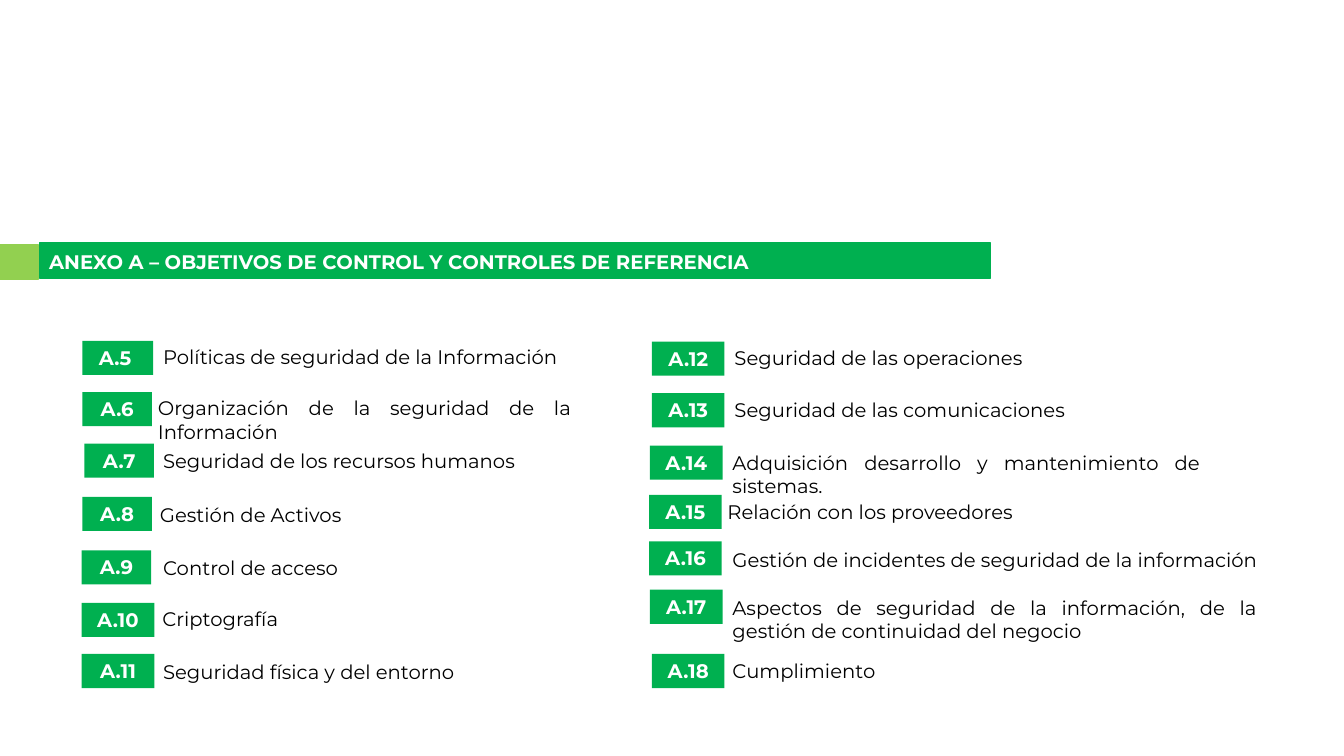
from pptx import Presentation
from pptx.dml.color import RGBColor
from pptx.enum.shapes import MSO_SHAPE
from pptx.enum.text import MSO_ANCHOR, MSO_AUTO_SIZE, PP_ALIGN
from pptx.util import Cm, Pt

COLORS = {"green": "00B050", "lime": "92D050", "white": "FFFFFF", "black": "000000"}
ROW_H = 0.86

# badge, (left, top, width), description, (left, top, width), in cm
CONTROLS = [
    ("A.5 ", (2.08, 8.59, 1.78), "Políticas de seguridad de la Información", (3.86, 8.56, 10.82)),
    ("A.6", (2.08, 9.88, 1.75), "Organización de la seguridad de la Información", (3.73, 9.86, 10.92)),
    ("A.7", (2.13, 11.18, 1.75), "Seguridad de los recursos humanos", (3.86, 11.18, 10.82)),
    ("A.8", (2.08, 12.52, 1.75), "Gestión de Activos", (3.78, 12.55, 10.92)),
    ("A.9", (2.06, 13.87, 1.75), "Control de acceso", (3.86, 13.89, 11.81)),
    ("A.10", (2.06, 15.19, 1.83), "Criptografía", (3.84, 15.16, 10.82)),
    ("A.11", (2.06, 16.48, 1.83), "Seguridad física y del entorno", (3.86, 16.51, 13.39)),
    ("A.12", (16.43, 8.61, 1.83), "Seguridad de las operaciones", (18.26, 8.59, 13.39)),
    ("A.13", (16.43, 9.91, 1.83), "Seguridad de las comunicaciones", (18.26, 9.91, 12.29)),
    ("A.14", (16.38, 11.23, 1.83), "Adquisición desarrollo y mantenimiento de sistemas.", (18.21, 11.23, 12.29)),
    ("A.15", (16.36, 12.47, 1.83), "Relación con los proveedores", (18.08, 12.47, 12.29)),
    ("A.16", (16.36, 13.64, 1.83), "Gestión de incidentes de seguridad de la información", (18.21, 13.67, 14.68)),
    ("A.17", (16.38, 14.86, 1.83), "Aspectos de seguridad de la información, de la gestión de continuidad del negocio", (18.21, 14.88, 13.72)),
    ("A.18", (16.43, 16.48, 1.83), "Cumplimiento", (18.21, 16.48, 12.29)),
]

prs = Presentation()
prs.slide_width, prs.slide_height = Cm(33.87), Cm(19.05)
s = prs.slides.add_slide(prs.slide_layouts[6])


def add_bar(left, top, width, height, color, outlined=False):
    sp = s.shapes.add_shape(MSO_SHAPE.RECTANGLE, Cm(left), Cm(top), Cm(width), Cm(height))
    sp.shadow.inherit = False
    sp.fill.solid()
    sp.fill.fore_color.rgb = RGBColor.from_string(COLORS[color])
    if outlined:
        sp.line.color.rgb = RGBColor.from_string(COLORS[color])
        sp.line.width = Pt(1)
    else:
        sp.line.fill.background()
    return sp


def write(sp, text, color, align, bold=False):
    tf = sp.text_frame
    tf.text = text
    tf.word_wrap = True
    tf.auto_size = MSO_AUTO_SIZE.SHAPE_TO_FIT_TEXT
    tf.vertical_anchor = MSO_ANCHOR.TOP
    p = tf.paragraphs[0]
    p.alignment = align
    font = p.runs[0].font
    font.name, font.size, font.bold = "Montserrat", Pt(14), bold
    font.color.rgb = RGBColor.from_string(COLORS[color])


add_bar(0, 6.17, 0.97, ROW_H, "lime", outlined=True)
add_bar(0.99, 6.12, 23.98, 0.89, "green", outlined=True)
title = s.shapes.add_textbox(Cm(0.99), Cm(6.17), Cm(21.56), Cm(ROW_H))
write(title, "ANEXO A – OBJETIVOS DE CONTROL Y CONTROLES DE REFERENCIA", "white", PP_ALIGN.LEFT, bold=True)

for code, badge_at, description, (left, top, width) in CONTROLS:
    label = s.shapes.add_textbox(Cm(left), Cm(top), Cm(width), Cm(ROW_H))
    write(label, description, "black", PP_ALIGN.JUSTIFY)
    badge = add_bar(*badge_at, ROW_H, "green")
    write(badge, code, "white", PP_ALIGN.CENTER, bold=True)

prs.save("out.pptx")
